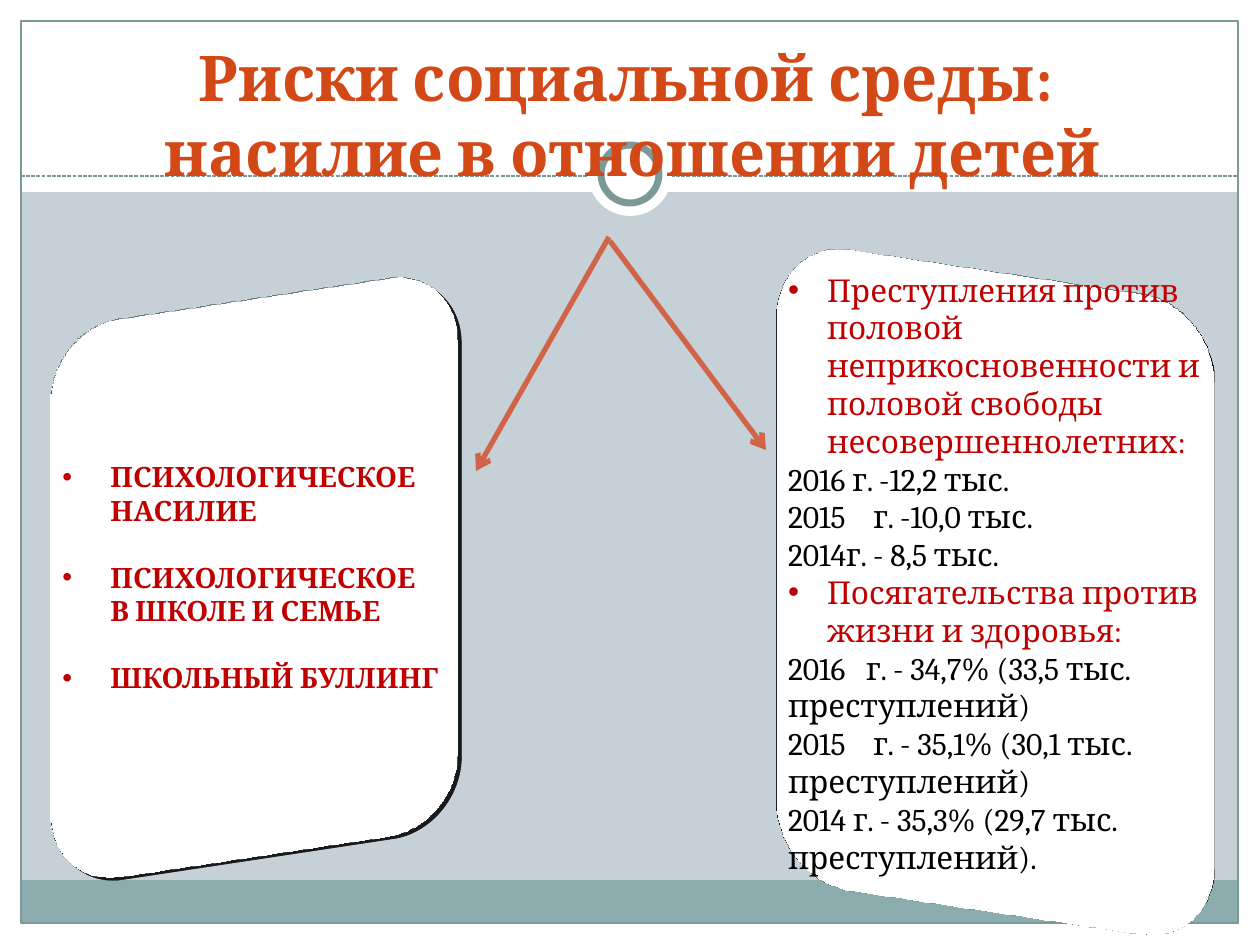
"""Build the slide on social risks and violence against children."""
from lxml import etree
from pptx import Presentation
from pptx.dml.color import RGBColor
from pptx.enum.dml import MSO_LINE
from pptx.enum.shapes import MSO_CONNECTOR, MSO_SHAPE
from pptx.enum.text import MSO_ANCHOR, PP_ALIGN
from pptx.oxml.ns import qn
from pptx.util import Pt

PX = 914400 / 126
WIDTH, HEIGHT = 1260, 945
FONT = "Cambria"
RECTANGLE, OVAL, ROUNDED = MSO_SHAPE.RECTANGLE, MSO_SHAPE.OVAL, MSO_SHAPE.ROUNDED_RECTANGLE
STRAIGHT = MSO_CONNECTOR.STRAIGHT
DASH = MSO_LINE.SQUARE_DOT
MIDDLE, CENTER, LEFT = MSO_ANCHOR.MIDDLE, PP_ALIGN.CENTER, PP_ALIGN.LEFT
COLORS = {"background": "C5D1D7", "white": "FFFFFF", "band": "8CADAE", "frame": "7C999A",
          "title": "D34817", "red": "C00000", "black": "000000", "arrow": "D16349"}

TITLE = ["Риски социальной среды: ", "насилие в отношении детей"]
VIOLENCE = [("ПСИХОЛОГИЧЕСКОЕ НАСИЛИЕ", "bullet"),
            ("ПСИХОЛОГИЧЕСКОЕ  В ШКОЛЕ И СЕМЬЕ", "bullet"),
            ("ШКОЛЬНЫЙ БУЛЛИНГ", "bullet")]
CRIMES = [
    ("Преступления против половой неприкосновенности и половой свободы несовершеннолетних:",
     "bullet"),
    ("2016 г. -12,2 тыс.", None),
    ("2015    г. -10,0 тыс.", None),
    ("г. - 8,5 тыс.", 2014),
    ("Посягательства против жизни и здоровья:", "bullet"),
    ("2016   г. - 34,7% (33,5 тыс. преступлений)", None),
    ("2015    г. - 35,1% (30,1 тыс. преступлений)", None),
    ("2014 г. - 35,3% (29,7 тыс. преступлений).", None),
]
NUMBER_INDENT = 48
PANELS = [
    dict(items=CRIMES, box=(752, 255, 486, 674), camera="isometricOffAxis2Left",
         size=18, bold=False, indent=39, gap=0, bottom=44, shadow=False),
    dict(items=VIOLENCE, box=(28, 284, 453, 586), camera="isometricOffAxis1Right",
         size=16, bold=True, indent=48, gap=19, bottom=6, shadow=True),
]
MARGIN = 21
BLOCKS = [
    (RECTANGLE, 0, HEIGHT - MARGIN, WIDTH, MARGIN, "white", None, 0),
    (RECTANGLE, 0, 0, WIDTH, 192, "white", None, 0),
    (RECTANGLE, 0, 0, MARGIN, HEIGHT, "white", None, 0),
    (RECTANGLE, WIDTH - MARGIN, 0, MARGIN, HEIGHT, "white", None, 0),
    (RECTANGLE, MARGIN, 880, WIDTH - 2 * MARGIN, 43, "band", None, 0),
    (RECTANGLE, MARGIN, MARGIN, 1217, 902, None, "frame", 0.75),
]
CIRCLES = [(OVAL, 588, 132, 84, 84, "white", None, 0),
           (OVAL, 601, 145, 58, 58, "white", "frame", 4)]
ARROWS = [(609, 237, 476, 471), (610, 241, 766, 450)]


def emu(pixels):
    return round(pixels * PX)


def color(name):
    return RGBColor.from_string(COLORS[name])


def add_block(slide, kind, left, top, width, height, fill, line, weight):
    shape = slide.shapes.add_shape(kind, emu(left), emu(top), emu(width), emu(height))
    shape.shadow.inherit = False
    if fill:
        shape.fill.solid()
        shape.fill.fore_color.rgb = color(fill)
    else:
        shape.fill.background()
    if line:
        shape.line.color.rgb = color(line)
        shape.line.width = Pt(weight)
    else:
        shape.line.fill.background()
    return shape


def add_line(slide, ends, name, weight, dash=None, arrow=False):
    connector = slide.shapes.add_connector(STRAIGHT, *map(emu, ends))
    connector.line.color.rgb = color(name)
    connector.line.width = Pt(weight)
    if dash:
        connector.line.dash_style = dash
    if arrow:
        etree.SubElement(connector.line._get_or_add_ln(), qn("a:tailEnd"), type="arrow")
    etree.SubElement(connector._element.spPr, qn("a:effectLst"))


def add_run(paragraph, text, size, name, bold):
    run = paragraph.add_run()
    run.text = text
    run.font.name = FONT
    run.font.size = Pt(size)
    run.font.bold = bold
    run.font.color.rgb = color(name)


def add_marker(paragraph, marker, indent):
    properties = paragraph._p.get_or_add_pPr()
    properties.set("marL", str(emu(indent)))
    properties.set("indent", str(-emu(indent)))
    if marker == "bullet":
        etree.SubElement(properties, qn("a:buFont"), typeface="Arial")
        etree.SubElement(properties, qn("a:buChar"), char="•")
    else:
        etree.SubElement(properties, qn("a:buAutoNum"), type="arabicPlain", startAt=str(marker))


def add_shadow(shape):
    effects = shape._element.spPr.find(qn("a:effectLst"))
    shadow = etree.SubElement(effects, qn("a:outerShdw"), blurRad=str(Pt(4)),
                              dist=str(Pt(3)), dir="2700000", rotWithShape="0")
    shade = etree.SubElement(shadow, qn("a:srgbClr"), val=COLORS["black"])
    etree.SubElement(shade, qn("a:alpha"), val="40000")


def turn_in_space(shape, camera):
    properties = shape._element.spPr
    scene = etree.SubElement(properties, qn("a:scene3d"))
    etree.SubElement(scene, qn("a:camera"), prst=camera)
    etree.SubElement(scene, qn("a:lightRig"), rig="threePt", dir="t")
    etree.SubElement(properties, qn("a:sp3d"), extrusionH=str(Pt(1)))


def add_panel(slide, panel):
    shape = add_block(slide, ROUNDED, *panel["box"], "white", "band", 0.9)
    shape.line.dash_style = DASH
    if panel["shadow"]:
        add_shadow(shape)
    turn_in_space(shape, panel["camera"])
    frame = shape.text_frame
    frame.word_wrap = True
    frame.vertical_anchor = MIDDLE
    frame.margin_bottom = emu(panel["bottom"])
    for index, (text, marker) in enumerate(panel["items"]):
        paragraph = frame.add_paragraph() if index else frame.paragraphs[0]
        paragraph.alignment = LEFT
        if index and panel["gap"]:
            paragraph.space_before = Pt(panel["gap"])
        bulleted = marker == "bullet"
        if marker:
            add_marker(paragraph, marker, panel["indent"] if bulleted else NUMBER_INDENT)
        add_run(paragraph, text, panel["size"], "red" if bulleted else "black", panel["bold"])


def add_title(slide):
    box = slide.shapes.add_textbox(emu(22), emu(32), emu(1221), emu(165))
    frame = box.text_frame
    frame.word_wrap = True
    for index, text in enumerate(TITLE):
        paragraph = frame.add_paragraph() if index else frame.paragraphs[0]
        paragraph.alignment = CENTER
        add_run(paragraph, text, 36, "title", True)


def main():
    presentation = Presentation()
    presentation.slide_width, presentation.slide_height = emu(WIDTH), emu(HEIGHT)
    slide = presentation.slides.add_slide(presentation.slide_layouts[6])
    slide.background.fill.solid()
    slide.background.fill.fore_color.rgb = color("background")
    for block in BLOCKS:
        add_block(slide, *block)
    add_line(slide, (MARGIN, 176, WIDTH - MARGIN, 176), "frame", 0.75, dash=DASH)
    for circle in CIRCLES:
        add_block(slide, *circle)
    add_title(slide)
    for panel in PANELS:
        add_panel(slide, panel)
    for ends in ARROWS:
        add_line(slide, ends, "arrow", 3, arrow=True)
    presentation.save("out.pptx")


if __name__ == "__main__":
    main()
